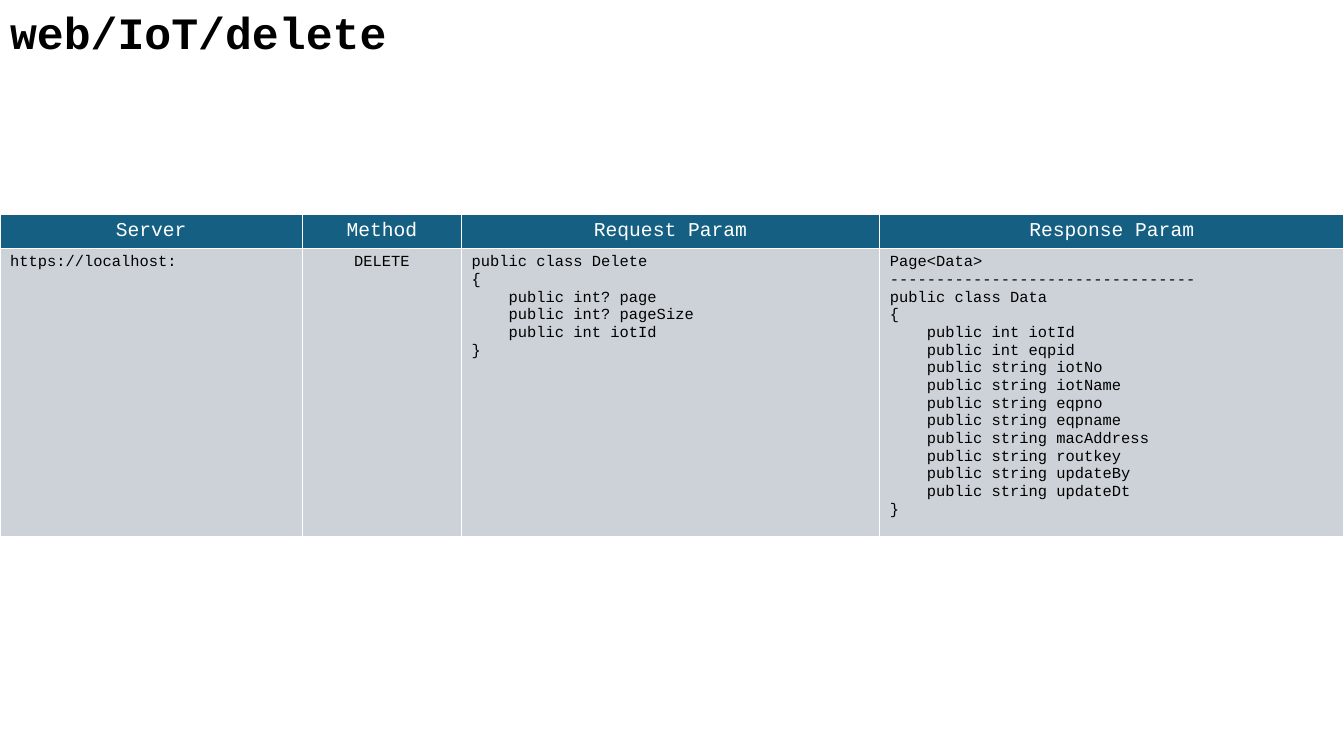
import pptx
import pptx.dml.color
import pptx.enum.text
import pptx.oxml
import pptx.oxml.ns
import pptx.util

Cm = pptx.util.Cm
Pt = pptx.util.Pt
ALIGN = pptx.enum.text.PP_ALIGN
ANCHOR = pptx.enum.text.MSO_ANCHOR


def rgb(value):
    return pptx.dml.color.RGBColor.from_string(value)


class Deck:
    """Holds the style and the current slide and adds elements to it."""

    font = "Courier New"
    ink = "000000"
    paper = "FFFFFF"
    header_fill = "156082"
    body_fill = "CCD2D8"

    def __init__(self, width, height):
        self.prs = pptx.Presentation()
        self.prs.slide_width = Cm(width)
        self.prs.slide_height = Cm(height)
        self.s = self.prs.slides.add_slide(self.prs.slide_layouts[5])

    def text(self, tf, lines, size, color, align=ALIGN.LEFT, bold=False):
        for i, line in enumerate(lines):
            p = tf.paragraphs[0] if i == 0 else tf.add_paragraph()
            p.alignment = align
            r = p.add_run()
            r.text = line
            r.font.name = self.font
            r.font.size = Pt(size)
            r.font.bold = bold
            r.font.color.rgb = rgb(color)

    def title(self, text, left, top, width, height):
        sp = self.s.shapes.title
        sp.left, sp.top, sp.width, sp.height = map(Cm, (left, top, width, height))
        tf = sp.text_frame
        tf.word_wrap = True
        tf.auto_size = pptx.enum.text.MSO_AUTO_SIZE.SHAPE_TO_FIT_TEXT
        tf.vertical_anchor = ANCHOR.TOP
        self.text(tf, [text], 32, self.ink, bold=True)

    def border(self, cell):
        tc_pr = cell._tc.get_or_add_tcPr()
        for side in "LRTB":
            tc_pr.append(pptx.oxml.parse_xml(
                f'<a:ln{side} {pptx.oxml.ns.nsdecls("a")} w="{Pt(1)}"><a:solidFill>'
                f'<a:srgbClr val="{self.paper}"/></a:solidFill></a:ln{side}>'))

    def cell(self, cell, lines, size, color, fill, align):
        self.border(cell)
        cell.fill.solid()
        cell.fill.fore_color.rgb = rgb(fill)
        cell.vertical_anchor = ANCHOR.TOP
        self.text(cell.text_frame, lines, size, color, align)

    def table(self, columns, left, top, heights):
        width = sum(column[0] for column in columns)
        table = self.s.shapes.add_table(
            2, len(columns), Cm(left), Cm(top), Cm(width), Cm(sum(heights))).table
        table.first_row = False
        table.horz_banding = False
        for row, height in zip(table.rows, heights):
            row.height = Cm(height)
        for i, (width, heading, align, body) in enumerate(columns):
            table.columns[i].width = Cm(width)
            self.cell(table.cell(0, i), [heading], 14, self.paper,
                      self.header_fill, ALIGN.CENTER)
            self.cell(table.cell(1, i), body.split("\n"), 11, self.ink,
                      self.body_fill, align)


REQUEST = """public class Delete
{
    public int? page
    public int? pageSize
    public int iotId
}"""

RESPONSE = """Page<Data>
---------------------------------
public class Data
{
    public int iotId
    public int eqpid
    public string iotNo
    public string iotName
    public string eqpno
    public string eqpname
    public string macAddress
    public string routkey
    public string updateBy
    public string updateDt
}"""


def main():
    deck = Deck(33.87, 19.05)
    deck.title("web/IoT/delete", 0, 0, 24, 1.63)
    deck.table([
        (7.62, "Server", ALIGN.LEFT, "https://localhost:"),
        (4.01, "Method", ALIGN.CENTER, "DELETE"),
        (10.54, "Request Param", ALIGN.LEFT, REQUEST),
        (11.7, "Response Param", ALIGN.LEFT, RESPONSE),
    ], 0, 5.41, (0.86, 7.22))
    deck.prs.save("out.pptx")


if __name__ == "__main__":
    main()
